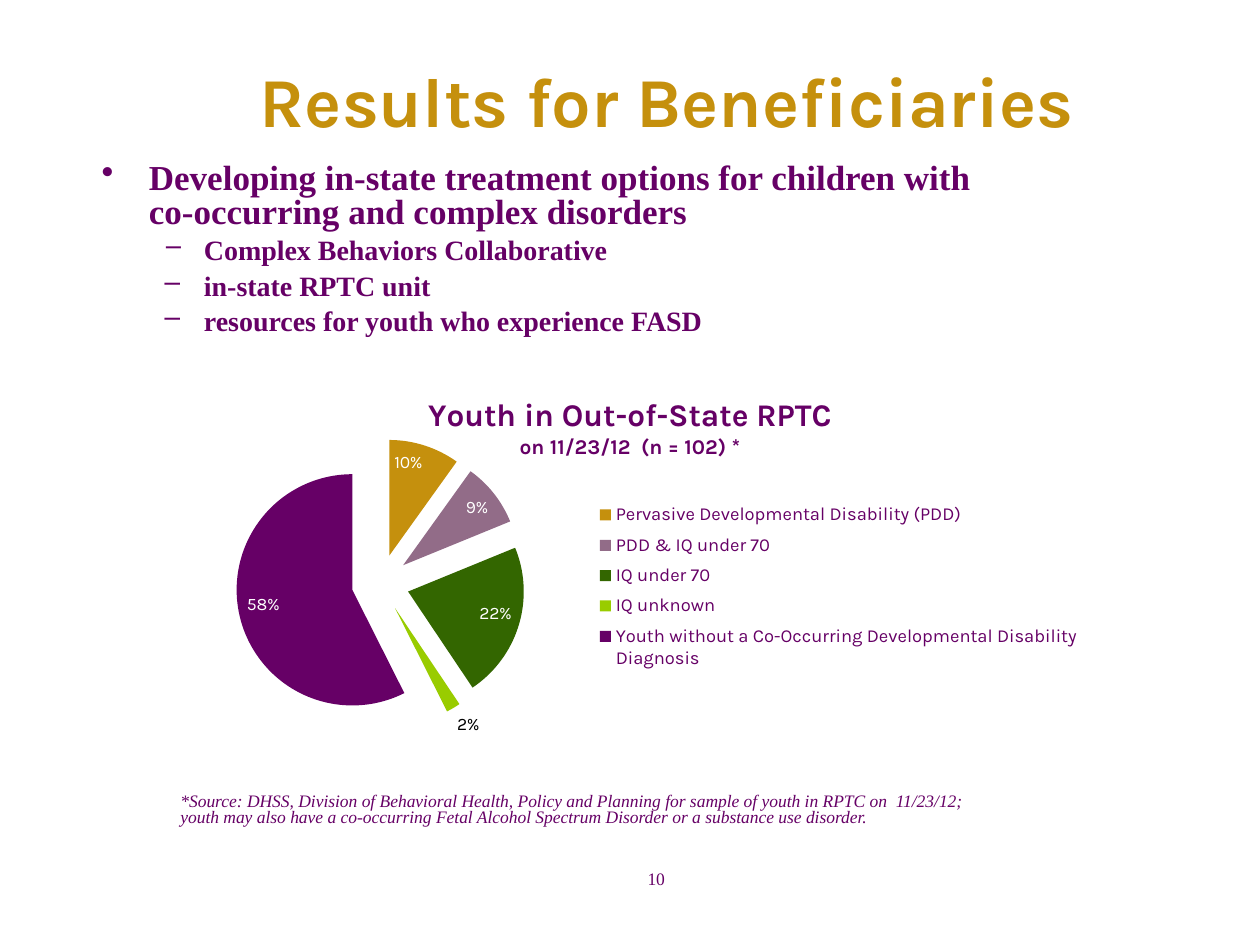
from dataclasses import dataclass

from lxml import etree
from pptx import Presentation
from pptx.chart.data import CategoryChartData
from pptx.dml.color import RGBColor
from pptx.enum.chart import XL_CHART_TYPE, XL_LABEL_POSITION, XL_LEGEND_POSITION
from pptx.enum.text import MSO_ANCHOR, MSO_AUTO_SIZE, PP_ALIGN
from pptx.oxml import parse_xml
from pptx.oxml.ns import nsdecls, qn
from pptx.util import Pt

CENTER, LEFT = PP_ALIGN.CENTER, PP_ALIGN.LEFT
MIDDLE, TOP = MSO_ANCHOR.MIDDLE, MSO_ANCHOR.TOP
NO_AUTOFIT = MSO_AUTO_SIZE.NONE
PIE = XL_CHART_TYPE.PIE
LEGEND_RIGHT = XL_LEGEND_POSITION.RIGHT
INSIDE, OUTSIDE = XL_LABEL_POSITION.INSIDE_END, XL_LABEL_POSITION.OUTSIDE_END


@dataclass(frozen=True)
class Theme:
    gold: str = "C5900D"
    purple: str = "660066"
    mauve: str = "926C88"
    green: str = "336600"
    lime: str = "99CC00"
    white: str = "FFFFFF"
    black: str = "000000"
    sans: str = "Karla"
    serif: str = "Times New Roman"
    title: float = 40
    point: float = 20
    subpoint: float = 16
    chart_title: float = 18
    chart_subtitle: float = 12
    legend: float = 10.5
    small: float = 10


THEME = Theme()

POINT = "Developing in-state treatment options for children with \vco-occurring and complex disorders"
SUBPOINTS = [
    ("‒", "Complex Behaviors Collaborative"),
    ("–", "in-state RPTC unit"),
    ("–", "resources for youth who experience FASD"),
]
SOURCE_NOTE = (
    "*Source: DHSS, Division of Behavioral Health, Policy and Planning for sample of youth "
    "in RPTC on  11/23/12; youth may also have a co-occurring Fetal Alcohol Spectrum Disorder "
    "or a substance use disorder."
)
# Diagnosis, percent of youth, slice colour
SLICES = [
    ("Pervasive Developmental Disability (PDD)", 10, THEME.gold),
    ("PDD & IQ under 70", 9, THEME.mauve),
    ("IQ under 70 ", 22, THEME.green),
    ("IQ unknown", 2, THEME.lime),
    ("Youth without a Co-Occurring Developmental Disability Diagnosis", 58, THEME.purple),
]
THIN_SLICE = 3


def style_font(font, size, color=THEME.purple, face=THEME.serif, bold=False, italic=False):
    font.size, font.name = Pt(size), face
    font.bold, font.italic = bold, italic
    font.color.rgb = RGBColor.from_string(color)


def write(paragraph, text, *, align=LEFT, spacing=None, before=0, bullet=None,
          margin=0, hanging=0, level=0, **font):
    """Put formatted text into a paragraph, with an optional hanging bullet."""
    paragraph.text = text
    paragraph.alignment, paragraph.level = align, level
    paragraph.space_before = Pt(before)
    if spacing:
        paragraph.line_spacing = spacing
    if bullet:
        properties = paragraph._p.get_or_add_pPr()
        properties.set("marL", str(Pt(margin)))
        properties.set("indent", str(-Pt(hanging)))
        etree.SubElement(properties, qn("a:buChar")).set("char", bullet)
    for run in paragraph.runs:
        style_font(run.font, **font)


def add_text_frame(slide, left, top, width, height):
    frame = slide.shapes.add_textbox(Pt(left), Pt(top), Pt(width), Pt(height)).text_frame
    frame.word_wrap = True
    frame.vertical_anchor = TOP
    return frame


def place_title(slide, text):
    title = slide.shapes.title
    title.left, title.top, title.width, title.height = Pt(78), Pt(24), Pt(606), Pt(66)
    title.text_frame.vertical_anchor = MIDDLE
    title.text_frame.auto_size = NO_AUTOFIT
    write(title.text_frame.paragraphs[0], text, align=CENTER, size=THEME.title,
          color=THEME.gold, face=THEME.sans, bold=True)


def add_points(slide):
    frame = add_text_frame(slide, 51, 90, 618, 138)
    write(frame.paragraphs[0], POINT, spacing=0.8, bullet="•", margin=27, hanging=27,
          size=THEME.point, bold=True)
    for bullet, text in SUBPOINTS:
        write(frame.add_paragraph(), text, spacing=0.8, before=4.8, bullet=bullet,
              margin=58.5, hanging=22.5, level=1, size=THEME.subpoint, bold=True)


def manual_layout(x, y, w, h, target=""):
    """Chart layout given as fractions of the chart area."""
    inner = f'<c:layoutTarget val="{target}"/>' if target else ""
    return parse_xml(
        f'<c:layout {nsdecls("c")}><c:manualLayout>{inner}'
        '<c:xMode val="edge"/><c:yMode val="edge"/>'
        f'<c:x val="{x}"/><c:y val="{y}"/><c:w val="{w}"/><c:h val="{h}"/>'
        '</c:manualLayout></c:layout>'
    )


def format_chart_title(chart):
    chart.has_title = True
    chart.chart_title.include_in_layout = False
    frame = chart.chart_title.text_frame
    write(frame.paragraphs[0], "Youth in Out-of-State RPTC", align=CENTER,
          size=THEME.chart_title, face=THEME.sans, bold=True)
    write(frame.add_paragraph(), "on 11/23/12  (n = 102) *", align=CENTER,
          size=THEME.chart_subtitle, face=THEME.sans, bold=True)


def format_legend(chart):
    chart.has_legend = True
    legend = chart.legend
    legend.position, legend.include_in_layout = LEGEND_RIGHT, False
    style_font(legend.font, THEME.legend, face=THEME.sans)
    legend._element.find(qn("c:legendPos")).addnext(manual_layout(0.46, 0.33, 0.49, 0.51))


def format_slices(plot):
    series = plot.series[0]
    explosion = parse_xml(f'<c:explosion {nsdecls("c")} val="25"/>')
    series._element.find(qn("c:tx")).addnext(explosion)
    for index, (_, _, color) in enumerate(SLICES):
        fill = series.points[index].format.fill
        fill.solid()
        fill.fore_color.rgb = RGBColor.from_string(color)

    labels = series.data_labels
    labels.show_value = True
    labels.number_format, labels.number_format_is_linked = '0"%"', False
    labels.position = INSIDE
    style_font(labels.font, THEME.small, THEME.white, THEME.sans)
    # The thin slice carries its label outside
    thin_label = series.points[THIN_SLICE].data_label
    style_font(thin_label.font, THEME.small, THEME.black, THEME.sans)
    thin_label.position = OUTSIDE


def add_pie(slide):
    data = CategoryChartData(number_format='0"%"')
    data.categories = [name for name, _, _ in SLICES]
    data.add_series("Series 1", [share for _, share, _ in SLICES])
    chart = slide.shapes.add_chart(PIE, Pt(69), Pt(216), Pt(582), Pt(204), data).chart
    style_font(chart.font, THEME.small, THEME.black)
    format_chart_title(chart)
    format_legend(chart)
    format_slices(chart.plots[0])
    plot_area = chart._chartSpace.chart.plotArea
    for layout in plot_area.findall(qn("c:layout")):
        plot_area.remove(layout)
    plot_area.insert(0, manual_layout(0.06, 0.17, 0.39, 0.81, "inner"))


def main():
    deck = Presentation()
    deck.slide_width, deck.slide_height = Pt(720), Pt(540)
    slide = deck.slides.add_slide(deck.slide_layouts[5])

    # Heading and points
    place_title(slide, "Results for Beneficiaries")
    add_points(slide)

    # Source note, chart and page number
    note = add_text_frame(slide, 96, 450, 474, 27)
    write(note.paragraphs[0], SOURCE_NOTE, spacing=0.8, size=THEME.small, italic=True)
    add_pie(slide)
    page = add_text_frame(slide, 267, 492.5, 216, 24)
    write(page.paragraphs[0], "10", align=CENTER, size=THEME.small)

    deck.save("out.pptx")


if __name__ == "__main__":
    main()
